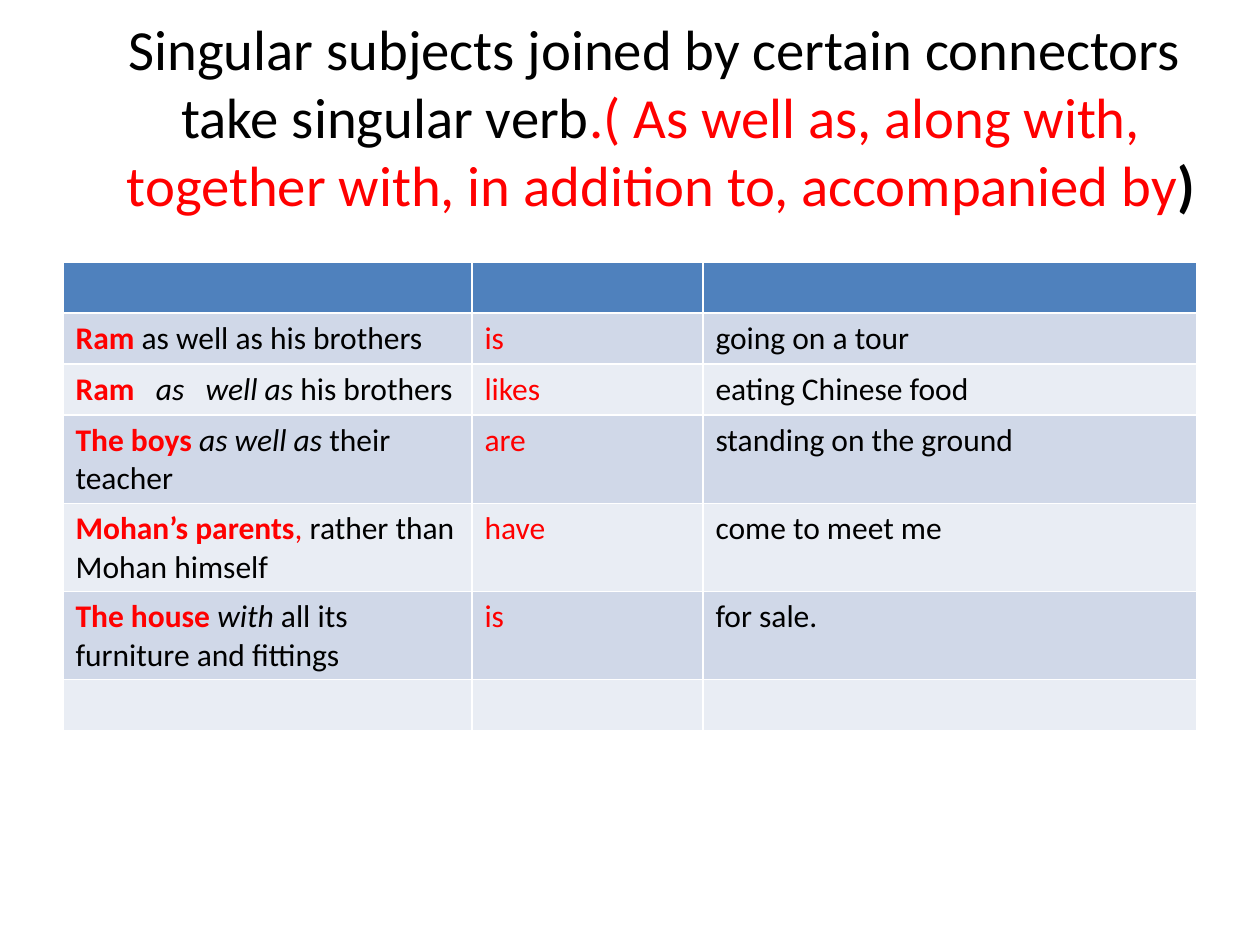
from pptx import Presentation
from pptx.dml.color import RGBColor
from pptx.enum.text import MSO_ANCHOR as ANCHOR, PP_ALIGN as ALIGN
from pptx.util import Pt

PX = 914400 / 126
BLACK, RED = "000000", "FF0000"
HEADER, BANDS = "4F81BD", ("D0D8E8", "E9EDF4")

PLAIN = {"color": BLACK}
ITALIC = {"color": BLACK, "italic": True}
VERB = {"color": RED}
SUBJECT = {"color": RED, "bold": True}
CLOSING = {"color": BLACK, "bold": True}

TITLE = [
    ("Singular subjects joined by certain connectors  take singular verb", PLAIN),
    (".( As well as, along with, together with, in addition to, accompanied by", VERB),
    (")", CLOSING),
]
COLUMNS = (409, 231, 494)
ROW_HEIGHT = 51
SENTENCES = [
    ([("Ram", SUBJECT), (" as well as his brothers", PLAIN)], "is", "going on a tour"),
    ([("Ram   ", SUBJECT), ("as   well as", ITALIC), (" his brothers", PLAIN)],
     "likes", "eating Chinese food"),
    ([("The boys ", SUBJECT), ("as well as ", ITALIC), ("their teacher", PLAIN)],
     "are", "standing on the ground"),
    ([("Mohan’s parents", SUBJECT), (", ", VERB), ("rather than Mohan himself", PLAIN)],
     "have", "come to meet me"),
    ([("The house ", SUBJECT), ("with ", ITALIC), ("all its furniture and fittings", PLAIN)],
     "is", "for sale."),
]


def px(n):
    """Turn whole pixels into EMU."""
    return round(n * PX)


def rgb(value):
    """Turn a hex string into a colour."""
    return RGBColor.from_string(value)


def add_runs(p, runs, size):
    """Write formatted runs into a paragraph."""
    for text, style in runs:
        r = p.add_run()
        r.text = text
        font = {"name": "Calibri", "size": Pt(size), "bold": False, "italic": False, **style}
        r.font.color.rgb = rgb(font.pop("color"))
        for name, value in font.items():
            setattr(r.font, name, value)


def add_title(s, x, y, w, h):
    """Place the grammar rule, centred in its box."""
    tf = s.shapes.add_textbox(px(x), px(y), px(w), px(h)).text_frame
    for name, value in {"word_wrap": True, "vertical_anchor": ANCHOR.MIDDLE}.items():
        setattr(tf, name, value)
    p = tf.paragraphs[0]
    p.alignment = ALIGN.CENTER
    add_runs(p, TITLE, 32.4)


def add_examples(s, x, y):
    """Place the table of example sentences between a blank header and a blank last row."""
    rows = [None]
    rows += [(subject, [(verb, VERB)], [(rest, PLAIN)]) for subject, verb, rest in SENTENCES]
    rows.append(None)
    table = s.shapes.add_table(len(rows), len(COLUMNS), px(x), px(y),
                               px(sum(COLUMNS)), px(ROW_HEIGHT * len(rows))).table
    for column, width in zip(table.columns, COLUMNS):
        column.width = px(width)
    for i, row in enumerate(rows):
        table.rows[i].height = px(ROW_HEIGHT)
        for j in range(len(COLUMNS)):
            cell = table.cell(i, j)
            cell.fill.solid()
            cell.fill.fore_color.rgb = rgb(BANDS[(i - 1) % 2] if i else HEADER)
            if row:
                add_runs(cell.text_frame.paragraphs[0], row[j], 18)


def main():
    """Build and save the slide."""
    prs = Presentation()
    prs.slide_width, prs.slide_height = px(1260), px(945)
    s = prs.slides.add_slide(prs.slide_layouts[6])
    add_title(s, 94, 0, 1134, 231)
    add_examples(s, 63, 262)
    prs.save("out.pptx")


if __name__ == "__main__":
    main()
